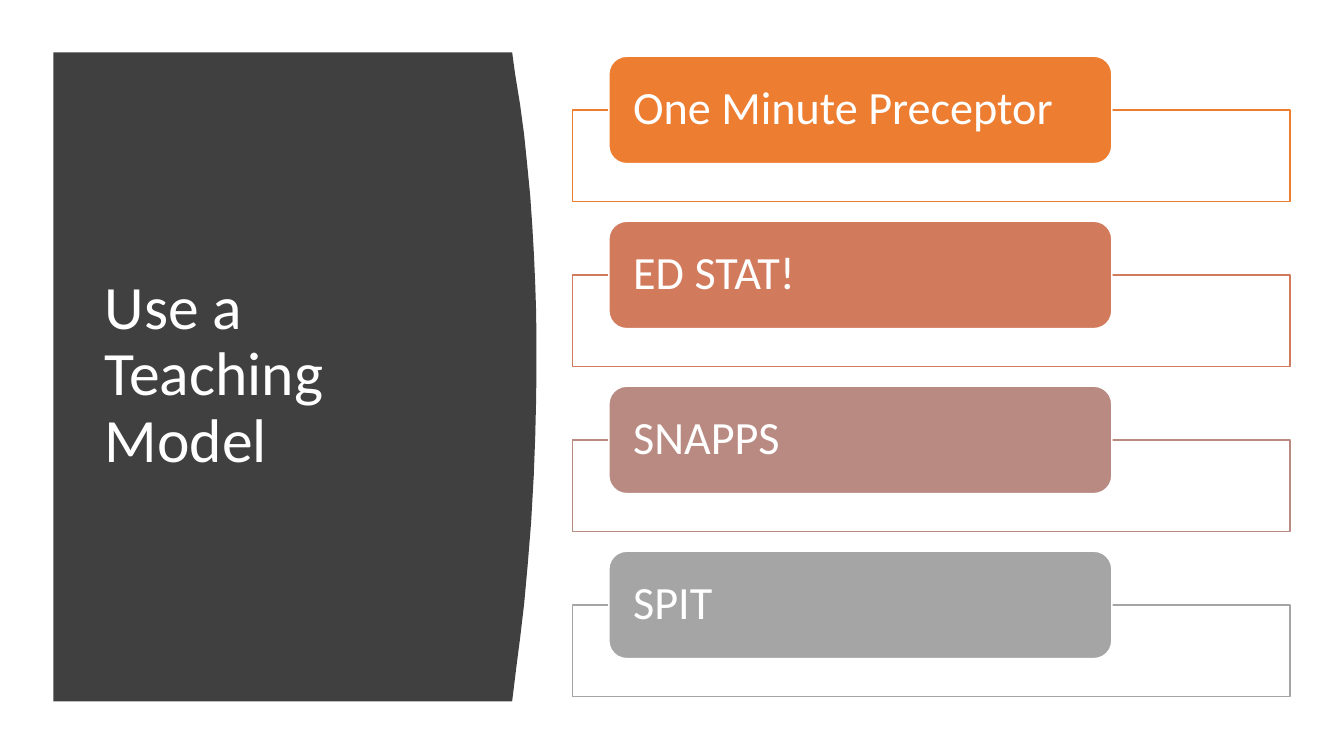
"""Build the teaching model slide."""
import dataclasses

import lxml.etree
import pptx
import pptx.dml.color
import pptx.enum.shapes
import pptx.enum.text
import pptx.oxml.ns
import pptx.util

Pt = pptx.util.Pt
SHAPE = pptx.enum.shapes.MSO_SHAPE


@dataclasses.dataclass(frozen=True)
class Theme:
    """Hold the colours, font and type sizes."""
    font: str = "Calibri"
    dark: str = "404040"
    white: str = "FFFFFF"
    tints: tuple = ("ED7D31", "D17B5C", "B98A82", "A5A5A5")
    title: int = 44
    label: int = 33
    rule: int = 1


class Deck:
    """Draw styled elements on the current slide."""

    def __init__(self, theme, wide, high):
        """Start a deck with one blank slide."""
        self.theme = theme
        self.file = pptx.Presentation()
        self.file.slide_width, self.file.slide_height = Pt(wide), Pt(high)
        self.slide = self.file.slides.add_slide(self.file.slide_layouts[6])

    def paint(self, shape, fill, line=None):
        """Set the fill and outline of a shape."""
        shape.shadow.inherit = False
        shape.fill.solid()
        shape.fill.fore_color.rgb = pptx.dml.color.RGBColor.from_string(fill)
        if line:
            shape.line.color.rgb = pptx.dml.color.RGBColor.from_string(line)
            shape.line.width = Pt(self.theme.rule)
        else:
            shape.line.fill.background()

    def words(self, shape, text, size, side, edge):
        """Set one left-aligned run, centred in height."""
        frame = shape.text_frame
        frame.word_wrap = True
        frame.vertical_anchor = pptx.enum.text.MSO_ANCHOR.MIDDLE
        frame.margin_left = frame.margin_right = Pt(side)
        frame.margin_top = frame.margin_bottom = Pt(edge)
        para = frame.paragraphs[0]
        para.alignment = pptx.enum.text.PP_ALIGN.LEFT
        para.line_spacing = 0.9
        run = para.add_run()
        run.text = text
        run.font.name, run.font.size = self.theme.font, Pt(size)
        run.font.color.rgb = pptx.dml.color.RGBColor.from_string(self.theme.white)

    def panel(self, points):
        """Draw the dark panel through the given points."""
        spots = [(Pt(x), Pt(y)) for x, y in points]
        pen = self.slide.shapes.build_freeform(*spots[0])
        pen.add_line_segments(spots[1:], close=True)
        self.paint(pen.convert_to_shape(), self.theme.dark)

    def title(self, text, *box):
        """Add the slide title."""
        shape = self.slide.shapes.add_textbox(*map(Pt, box))
        self.words(shape, text, self.theme.title, 7.2, 3.6)

    def frame(self, tint, *box):
        """Add an outlined, nearly opaque white box."""
        shape = self.slide.shapes.add_shape(SHAPE.RECTANGLE, *map(Pt, box))
        self.paint(shape, self.theme.white, tint)
        white = next(shape.element.spPr.iter(pptx.oxml.ns.qn("a:srgbClr")))
        lxml.etree.SubElement(white, pptx.oxml.ns.qn("a:alpha"), val="90000")

    def label(self, text, tint, *box):
        """Add a rounded label."""
        shape = self.slide.shapes.add_shape(SHAPE.ROUNDED_RECTANGLE, *map(Pt, box))
        self.paint(shape, tint, self.theme.white)
        self.words(shape, text, self.theme.label, 13.6, 0)


def main():
    """Build and save the slide."""
    deck = Deck(Theme(), 960, 540)
    curve = [(365.8, 37.4), (368, 53.3), (371.5, 74.9), (374.4, 96.5),
             (376.6, 118.1), (378.7, 139.7), (380.2, 161.3), (381.4, 182.2),
             (382.3, 203), (383, 224), (383.2, 254), (383, 283.7),
             (382.3, 311.8), (381.3, 339.1), (379.4, 373), (376.9, 403.9),
             (374.4, 431.3), (371.5, 455.8), (368.9, 475.9), (365.8, 501.1)]
    deck.panel([(38.2, 37.4), *curve, (38.2, 501.1)])
    deck.title("Use a Teaching Model", 67.7, 79.9, 269.3, 377.3)
    names = ("One Minute Preceptor", "ED STAT!", "SNAPPS", "SPIT")
    for row, (name, tint) in enumerate(zip(names, deck.theme.tints)):
        top = 40.2 + 117.85 * row
        deck.frame(tint, 409, top + 38.3, 512.6, 65.5)
        deck.label(name, tint, 434.9, top, 359.3, 76.7)
    deck.file.save("out.pptx")


if __name__ == "__main__":
    main()
